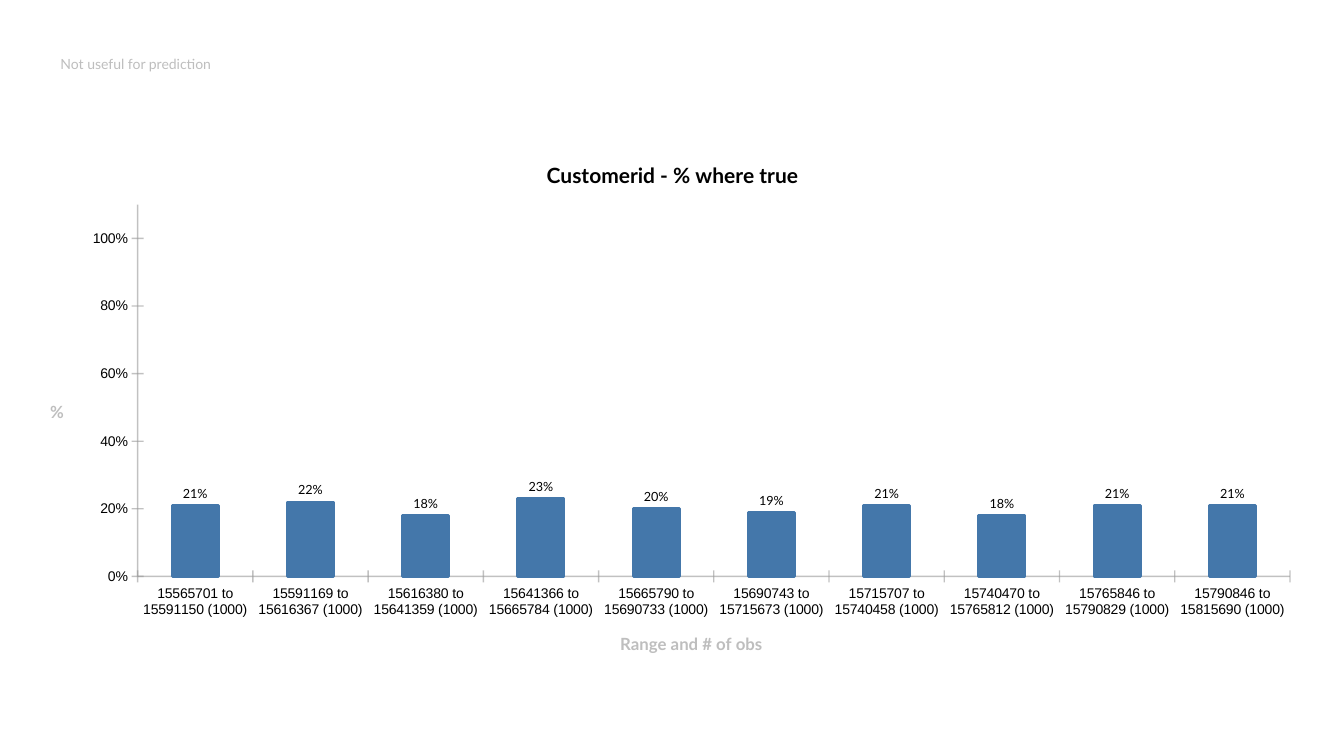
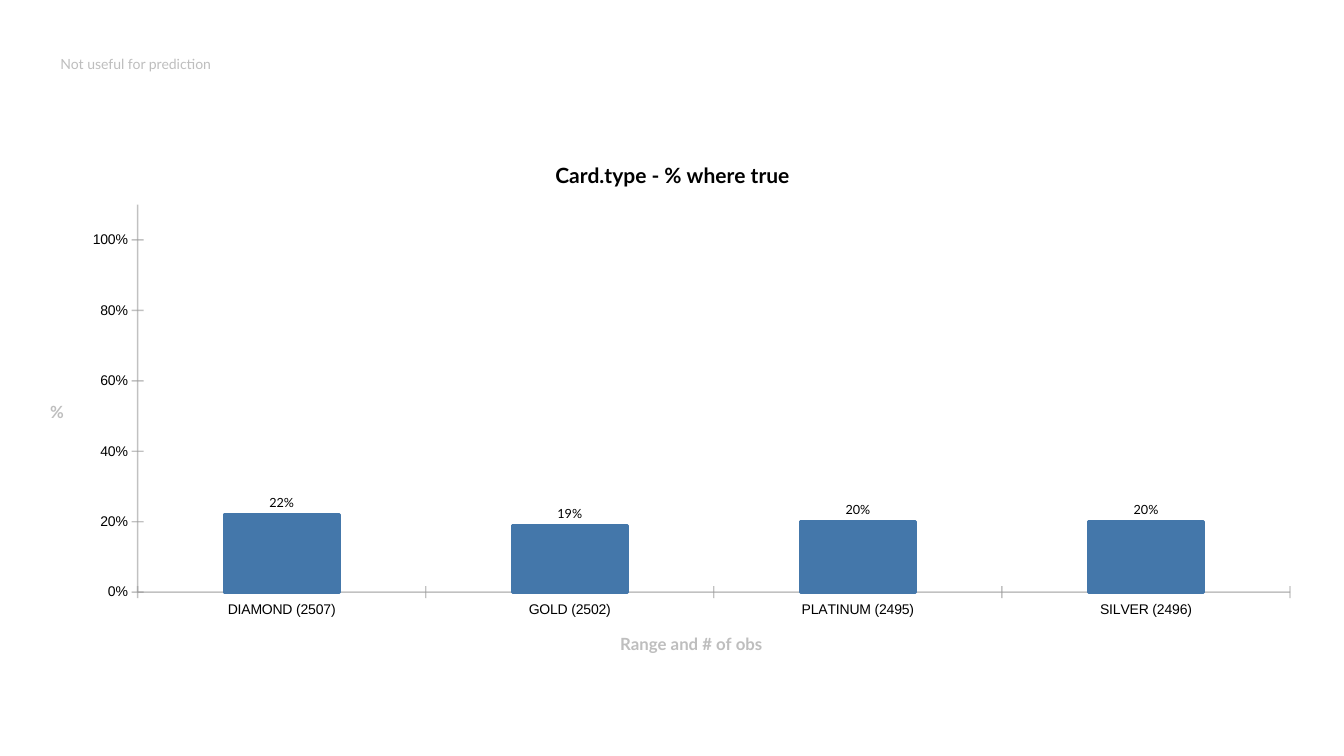
from dataclasses import dataclass

from lxml.etree import SubElement
from pptx import Presentation
from pptx.chart.axis import _BaseAxis as Axis
from pptx.chart.data import CategoryChartData as ChartData
from pptx.dml.color import RGBColor
from pptx.enum.chart import XL_CHART_TYPE as ChartType
from pptx.enum.chart import XL_LABEL_POSITION as LabelPosition
from pptx.enum.chart import XL_TICK_MARK as TickMark
from pptx.enum.text import MSO_ANCHOR as Anchor
from pptx.enum.text import MSO_AUTO_SIZE as AutoSize
from pptx.oxml.ns import qn
from pptx.slide import Slide
from pptx.text.text import Font, TextFrame
from pptx.util import Inches, Pt

BLACK = "000000"
GREY = "BEBEBE"
AXIS_GREY = "999999"
BLUE = "4477AA"
TEXT_FONT = "Lato"
AXIS_FONT = "Arial"
NOTE = "Not useful for prediction"
RANGE_TITLE = "Range and # of obs"


@dataclass
class ShareChart:
    title: str
    categories: list[str]
    shares: list[float]


CHARTS = [
    ShareChart(
        "Customerid - % where true",
        [
            "15565701 to 15591150 (1000)",
            "15591169 to 15616367 (1000)",
            "15616380 to 15641359 (1000)",
            "15641366 to 15665784 (1000)",
            "15665790 to 15690733 (1000)",
            "15690743 to 15715673 (1000)",
            "15715707 to 15740458 (1000)",
            "15740470 to 15765812 (1000)",
            "15765846 to 15790829 (1000)",
            "15790846 to 15815690 (1000)",
        ],
        [0.21, 0.22, 0.18, 0.23, 0.2, 0.19, 0.21, 0.18, 0.21, 0.21],
    ),
    ShareChart(
        "Card.type - % where true",
        ["DIAMOND (2507)", "GOLD (2502)", "PLATINUM (2495)", "SILVER (2496)"],
        [0.22, 0.19, 0.2, 0.2],
    ),
]


def color(value: str) -> RGBColor:
    return RGBColor.from_string(value)


def style_font(font: Font, size: float, fill: str = BLACK,
               name: str = TEXT_FONT, bold: bool = False) -> None:
    font.size = Pt(size)
    font.name = name
    font.bold = bold
    font.color.rgb = color(fill)


def write_text(text_frame: TextFrame, text: str, size: float,
               fill: str = BLACK, bold: bool = False) -> None:
    text_frame.text = text
    for run in text_frame.paragraphs[0].runs:
        style_font(run.font, size, fill, bold=bold)


def style_axis(axis: Axis, title: str) -> None:
    axis.has_major_gridlines = False
    axis.major_tick_mark = TickMark.CROSS
    axis.minor_tick_mark = TickMark.NONE
    style_font(axis.tick_labels.font, 10, name=AXIS_FONT)
    axis.format.line.width = Pt(1)
    axis.format.line.color.rgb = color(AXIS_GREY)
    line_color = axis._element.xpath("c:spPr/a:ln//a:srgbClr")[0]
    SubElement(line_color, qn("a:alpha")).set("val", "60000")
    title_frame = axis.axis_title.text_frame
    write_text(title_frame, title, 12, GREY, bold=True)
    title_frame._element.bodyPr.set("rot", "0")
    title_frame._element.bodyPr.set("vert", "horz")


def add_share_chart(slide: Slide, share_chart: ShareChart) -> None:
    data = ChartData(number_format="0%")
    data.categories = share_chart.categories
    data.add_series("Series 1", share_chart.shares)
    chart = slide.shapes.add_chart(
        ChartType.COLUMN_CLUSTERED,
        Inches(0.29), Inches(1.39), Inches(12.76), Inches(5.31), data,
    ).chart
    style_font(chart.font, 18)
    chart.has_legend = False
    chart.has_title = True
    write_text(chart.chart_title.text_frame, share_chart.title, 15, bold=True)

    style_axis(chart.category_axis, RANGE_TITLE)
    style_axis(chart.value_axis, "%")
    chart.value_axis.minimum_scale = 0
    chart.value_axis.maximum_scale = 1.1
    chart.value_axis.major_unit = 0.2
    chart.value_axis.tick_labels.number_format = "0%"
    chart.value_axis.tick_labels.number_format_is_linked = False

    plot = chart.plots[0]
    plot.gap_width = 150
    plot.vary_by_categories = False
    series = plot.series[0]
    series.format.fill.solid()
    series.format.fill.fore_color.rgb = color(BLUE)
    series.format.line.color.rgb = color(BLUE)
    series.format.line.width = Pt(2)
    labels = series.data_labels
    labels.show_value = True
    labels.position = LabelPosition.OUTSIDE_END
    labels.number_format = "0%"
    labels.number_format_is_linked = False
    style_font(labels.font, 9)


def fill_note(slide: Slide) -> None:
    note = slide.placeholders[1]
    note.left, note.top = Inches(0.5), Inches(0.5)
    note.width, note.height = Inches(6), Inches(1)
    text_frame = note.text_frame
    write_text(text_frame, NOTE, 10, GREY)
    text_frame.auto_size = AutoSize.NONE
    text_frame.vertical_anchor = Anchor.TOP
    paragraph = text_frame.paragraphs[0]
    paragraph.space_before = Pt(0)
    properties = paragraph._p.get_or_add_pPr()
    properties.set("marL", "0")
    properties.set("indent", "0")
    SubElement(properties, qn("a:buNone"))


def main() -> None:
    """Build one column chart slide for each variable."""
    presentation = Presentation()
    presentation.slide_width = Inches(13.33)
    presentation.slide_height = Inches(7.5)
    for share_chart in CHARTS:
        slide = presentation.slides.add_slide(presentation.slide_layouts[1])
        title = slide.shapes.title._element
        title.getparent().remove(title)
        add_share_chart(slide, share_chart)
        fill_note(slide)
    presentation.save("out.pptx")


if __name__ == "__main__":
    main()
